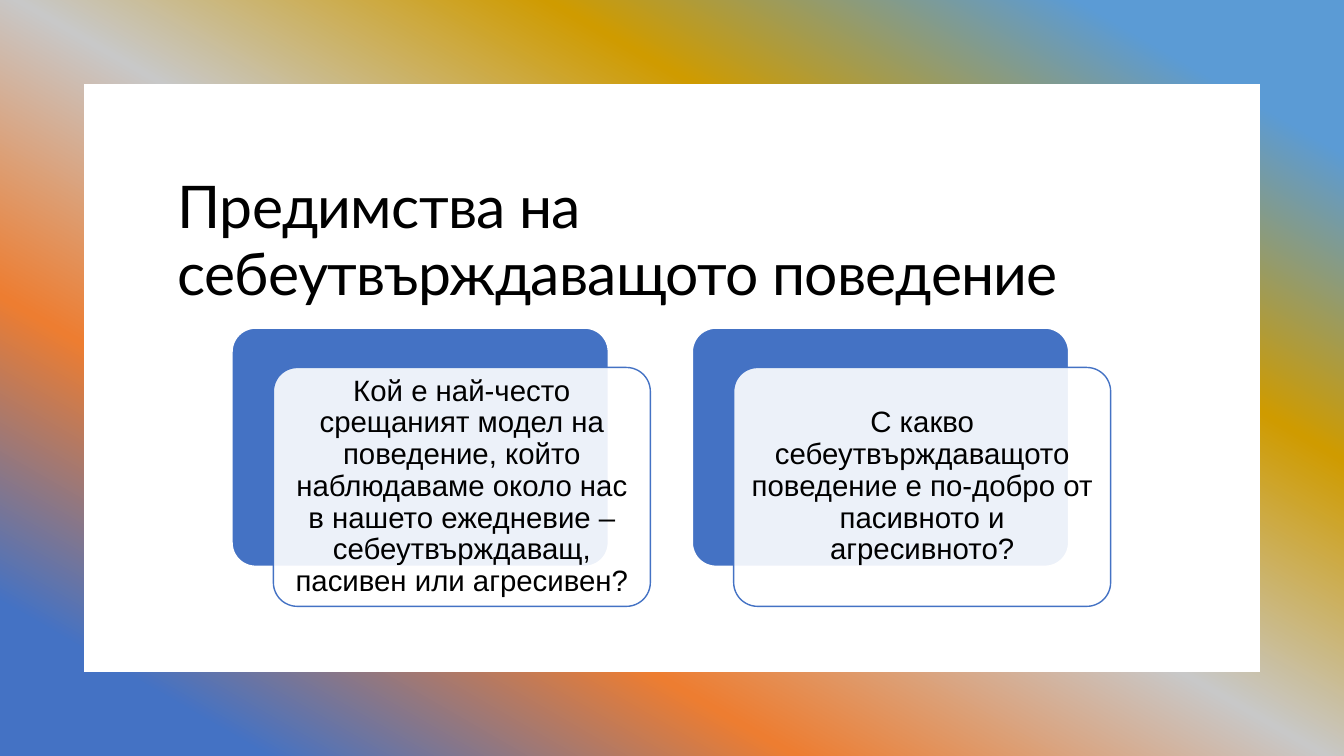
import copy
import dataclasses
import typing

import lxml.etree
import pptx
import pptx.dml.color
import pptx.enum.shapes
import pptx.enum.text
import pptx.oxml.ns
import pptx.util

Cm = pptx.util.Cm
Pt = pptx.util.Pt
Color = pptx.dml.color.RGBColor
Align = pptx.enum.text.PP_ALIGN
Anchor = pptx.enum.text.MSO_ANCHOR
Preset = pptx.enum.shapes.MSO_SHAPE

BLACK = Color(0x00, 0x00, 0x00)
WHITE = Color(0xFF, 0xFF, 0xFF)
BLUE = Color(0x44, 0x72, 0xC4)
SKY = Color(0x5B, 0x9B, 0xD5)
GOLD = Color(0xCF, 0x9B, 0x00)
GREY = Color(0xC8, 0xC8, 0xC8)
ORANGE = Color(0xED, 0x7D, 0x31)

GRADIENT = ((0.1, SKY), (0.3, GOLD), (0.5, GREY), (0.7, ORANGE), (0.9, BLUE))
SLIDE_WIDTH, SLIDE_HEIGHT = 33.87, 19.05
MARGIN = 2.12
CARD_LEFT, CARD_TOP, CARD_PITCH = 5.84, 8.26, 11.6
CARD_WIDTH, CARD_HEIGHT = 9.5, 6.02
FRONT_SHIFT_X, FRONT_SHIFT_Y = 1.05, 1.0

QUESTIONS = (
    "Кой е най-често срещаният модел на поведение, който наблюдаваме около нас "
    "в нашето ежедневие – себеутвърждаващ, пасивен или агресивен?",
    "С какво себеутвърждаващото поведение е по-добро от пасивното и агресивното?",
)


@dataclasses.dataclass(frozen=True)
class Block:
    """A filled shape, measured in centimetres."""
    left: float
    top: float
    width: float
    height: float
    fill: Color = WHITE
    preset: Preset = Preset.RECTANGLE
    line: typing.Optional[Color] = None
    line_width: float = 1
    opacity: int = 100


def draw_block(shapes: typing.Any, block: Block) -> typing.Any:
    shape = shapes.add_shape(block.preset, Cm(block.left), Cm(block.top),
                             Cm(block.width), Cm(block.height))
    shape.shadow.inherit = False
    shape.fill.solid()
    shape.fill.fore_color.rgb = block.fill
    if block.line is None:
        shape.line.fill.background()
    else:
        shape.line.color.rgb = block.line
        shape.line.width = Pt(block.line_width)
    if block.preset == Preset.ROUNDED_RECTANGLE:
        shape.adjustments[0] = 0.1
    if block.opacity < 100:
        color = shape.element.spPr.find(".//" + pptx.oxml.ns.qn("a:srgbClr"))
        lxml.etree.SubElement(color, pptx.oxml.ns.qn("a:alpha"),
                              val=str(block.opacity * 1000))
    return shape


def apply_gradient(shape: typing.Any) -> None:
    """Fill the shape with the five-colour diagonal gradient."""
    shape.fill.gradient()
    shape.fill.gradient_angle = 240
    stop_list = shape.element.spPr.find(".//" + pptx.oxml.ns.qn("a:gsLst"))
    stop_list.remove(stop_list[1])
    for _ in GRADIENT[1:]:
        stop_list.append(copy.deepcopy(stop_list[0]))
    for stop, (position, color) in zip(shape.fill.gradient_stops, GRADIENT):
        stop.position = position
        stop.color.rgb = color


def write_text(shape: typing.Any, text: str, *, font: str, size: float,
               align: Align, line_spacing: float, inset: float,
               letter_spacing: float = 0) -> None:
    frame = shape.text_frame
    frame.word_wrap = True
    frame.auto_size = pptx.enum.text.MSO_AUTO_SIZE.NONE
    frame.vertical_anchor = Anchor.MIDDLE
    frame.margin_left = frame.margin_right = Cm(inset)
    frame.margin_top = frame.margin_bottom = Cm(min(inset, 0.23))
    para = frame.paragraphs[0]
    para.alignment = align
    para.line_spacing = line_spacing
    span = para.add_run()
    span.text = text
    span.font.name = font
    span.font.size = Pt(size)
    span.font.color.rgb = BLACK
    if letter_spacing:
        span.font._element.set("spc", str(round(letter_spacing * 100)))


def draw_card(shapes: typing.Any, index: int, question: str) -> None:
    left = CARD_LEFT + index * CARD_PITCH
    rounded = Preset.ROUNDED_RECTANGLE
    draw_block(shapes, Block(left, CARD_TOP, CARD_WIDTH, CARD_HEIGHT, BLUE,
                             rounded, line=WHITE, line_width=1.5))
    front = draw_block(shapes, Block(left + FRONT_SHIFT_X, CARD_TOP + FRONT_SHIFT_Y,
                                     CARD_WIDTH, CARD_HEIGHT, WHITE, rounded,
                                     line=BLUE, opacity=90))
    write_text(front, question, font="Arial", size=21, align=Align.CENTER,
               line_spacing=0.9, inset=0.23)


def main() -> None:
    deck = pptx.Presentation()
    deck.slide_width, deck.slide_height = Cm(SLIDE_WIDTH), Cm(SLIDE_HEIGHT)
    slide = deck.slides.add_slide(deck.slide_layouts.get_by_name("Title Only"))

    backdrop = draw_block(slide.shapes, Block(0, 0, SLIDE_WIDTH, SLIDE_HEIGHT))
    apply_gradient(backdrop)
    draw_block(slide.shapes, Block(MARGIN, MARGIN, SLIDE_WIDTH - 2 * MARGIN,
                                   SLIDE_HEIGHT - 2 * MARGIN))

    title = slide.shapes.title
    title.left, title.top, title.width, title.height = map(Cm, (4.23, 4.23, 25.4, 3.73))
    write_text(title, "Предимства на себеутвърждаващото поведение", font="Lato",
               size=42, align=Align.LEFT, line_spacing=0.95, inset=0.25,
               letter_spacing=-0.5)
    # The placeholder comes first in the tree; raise it above the panel.
    title.element.getparent().append(title.element)

    cards = slide.shapes.add_group_shape()
    for index, question in enumerate(QUESTIONS):
        draw_card(cards.shapes, index, question)

    deck.save("out.pptx")


if __name__ == "__main__":
    main()
